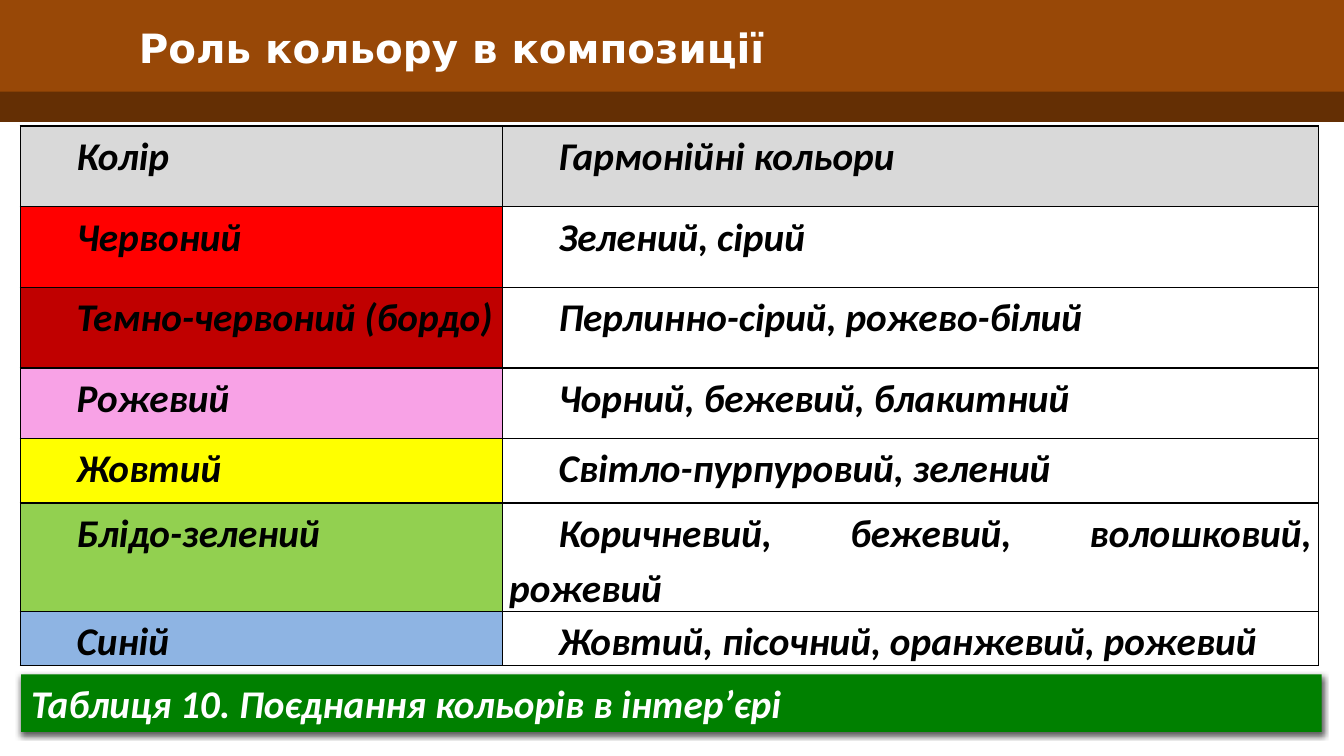
from dataclasses import dataclass

from lxml import etree
from pptx import Presentation
from pptx.dml.color import RGBColor
from pptx.enum import shapes, text
from pptx.oxml import parse_xml
from pptx.util import Inches, Pt

COLORS = {
    "white": "FFFFFF", "black": "000000", "brown": "984807", "dark brown": "642F04",
    "green": "008000", "grey": "D9D9D9", "red": "FF0000", "burgundy": "C00000",
    "pink": "F8A2E6", "yellow": "FFFF00", "pale green": "92D050", "blue": "8EB4E3",
}
NAMESPACE = "http://schemas.openxmlformats.org/drawingml/2006/main"
BODY_FONT = "Calibri"


@dataclass
class Bar:
    left: float
    top: float
    width: float
    height: float
    color: str


@dataclass
class Harmony:
    name: str
    partners: str
    height: float
    name_fill: str
    partners_fill: str | None = None


HEADER_BARS = [
    Bar(0, 0.87, 13.33, 0.34, "dark brown"),
    Bar(0, 0, 13.33, 0.91, "brown"),
]
CAPTION_BAR = Bar(0.21, 6.69, 12.9, 0.57, "green")
HARMONIES = [
    Harmony("Колір", "Гармонійні кольори", 0.8, "grey", "grey"),
    Harmony("Червоний", "Зелений, сірий", 0.8, "red"),
    Harmony("Темно-червоний (бордо)", "Перлинно-сірий, рожево-білий", 0.8, "burgundy"),
    Harmony("Рожевий", "Чорний, бежевий, блакитний", 0.7, "pink"),
    Harmony("Жовтий", "Світло-пурпуровий, зелений", 0.64, "yellow"),
    Harmony("Блідо-зелений", "Коричневий, бежевий, волошковий, рожевий", 0.48, "pale green"),
    Harmony("Синій", "Жовтий, пісочний, оранжевий, рожевий", 0.48, "blue"),
]
COLUMN_WIDTHS = [4.78, 8.1]


def rgb(name: str) -> RGBColor:
    return RGBColor.from_string(COLORS[name])


def style_font(paragraph, face: str, size: float, color: str, italic: bool = True) -> None:
    font = paragraph.font
    font.name, font.size = face, Pt(size)
    font.bold, font.italic = True, italic
    font.color.rgb = rgb(color)


def draw_bar(page, bar: Bar):
    box = page.shapes.add_shape(
        shapes.MSO_SHAPE.RECTANGLE,
        Inches(bar.left), Inches(bar.top), Inches(bar.width), Inches(bar.height))
    box.shadow.inherit = False
    box.fill.solid()
    box.fill.fore_color.rgb = rgb(bar.color)
    box.line.fill.background()
    return box


def add_shadow(box) -> None:
    effects = box._element.spPr.find(f"{{{NAMESPACE}}}effectLst")
    effects.append(parse_xml(
        f'<a:outerShdw xmlns:a="{NAMESPACE}" blurRad="{Pt(4.5)}" dist="{Pt(1.5)}" '
        f'dir="5400000" rotWithShape="0"><a:srgbClr val="{COLORS["black"]}">'
        '<a:alpha val="63000"/></a:srgbClr></a:outerShdw>'))


def add_borders(cell) -> None:
    properties = cell._tc.get_or_add_tcPr()
    for index, side in enumerate(("lnL", "lnR", "lnT", "lnB")):
        line = etree.fromstring(
            f'<a:{side} xmlns:a="{NAMESPACE}" w="{Pt(1)}"><a:solidFill>'
            f'<a:srgbClr val="{COLORS["black"]}"/></a:solidFill></a:{side}>')
        properties.insert(index, line)


def fill_cell(cell, content: str, color: str | None) -> None:
    cell.margin_left = cell.margin_right = Inches(0.07)
    cell.margin_top = cell.margin_bottom = 0
    if color:
        cell.fill.solid()
        cell.fill.fore_color.rgb = rgb(color)
    else:
        cell.fill.background()
    add_borders(cell)
    para = cell.text_frame.paragraphs[0]
    para.text = content
    para.alignment = text.PP_ALIGN.JUSTIFY
    para.line_spacing = 1.15
    para.space_after = Pt(6)
    indents = para._p.get_or_add_pPr()
    indents.set("marL", "0")
    indents.set("indent", str(Inches(0.49)))
    style_font(para, BODY_FONT, 28, "black")


def draw_table(page) -> None:
    frame = page.shapes.add_table(
        len(HARMONIES), len(COLUMN_WIDTHS),
        Inches(0.2), Inches(1.25), Inches(sum(COLUMN_WIDTHS)), Inches(5.36))
    table = frame.table
    table.first_row = table.horz_banding = False
    for column, width in zip(table.columns, COLUMN_WIDTHS):
        column.width = Inches(width)
    for row, harmony in zip(table.rows, HARMONIES):
        row.height = Inches(harmony.height)
        fill_cell(row.cells[0], harmony.name, harmony.name_fill)
        fill_cell(row.cells[1], harmony.partners, harmony.partners_fill)
    frame.height = Inches(5.36)


def draw_title(page) -> None:
    box = page.shapes.add_textbox(Inches(1.28), Inches(0.18), Inches(9.9), Inches(0.58))
    box.text_frame.word_wrap = True
    box.text_frame.vertical_anchor = text.MSO_ANCHOR.MIDDLE
    para = box.text_frame.paragraphs[0]
    para.text = "Роль кольору в композиції"
    style_font(para, "DejaVu Sans", 28.8, "white", italic=False)


def draw_caption(page) -> None:
    box = draw_bar(page, CAPTION_BAR)
    add_shadow(box)
    box.text_frame.word_wrap = True
    box.text_frame.auto_size = text.MSO_AUTO_SIZE.SHAPE_TO_FIT_TEXT
    box.text_frame.vertical_anchor = text.MSO_ANCHOR.TOP
    para = box.text_frame.paragraphs[0]
    para.text = "Таблиця 10. Поєднання кольорів в інтер’єрі"
    para.alignment = text.PP_ALIGN.LEFT
    style_font(para, BODY_FONT, 28, "white")


def main() -> None:
    deck = Presentation()
    deck.slide_width, deck.slide_height = Inches(13.33), Inches(7.5)
    page = deck.slides.add_slide(deck.slide_layouts[6])

    # Header
    for bar in HEADER_BARS:
        draw_bar(page, bar)
    draw_title(page)

    # Caption and colour table
    draw_caption(page)
    draw_table(page)

    deck.save("out.pptx")


if __name__ == "__main__":
    main()
